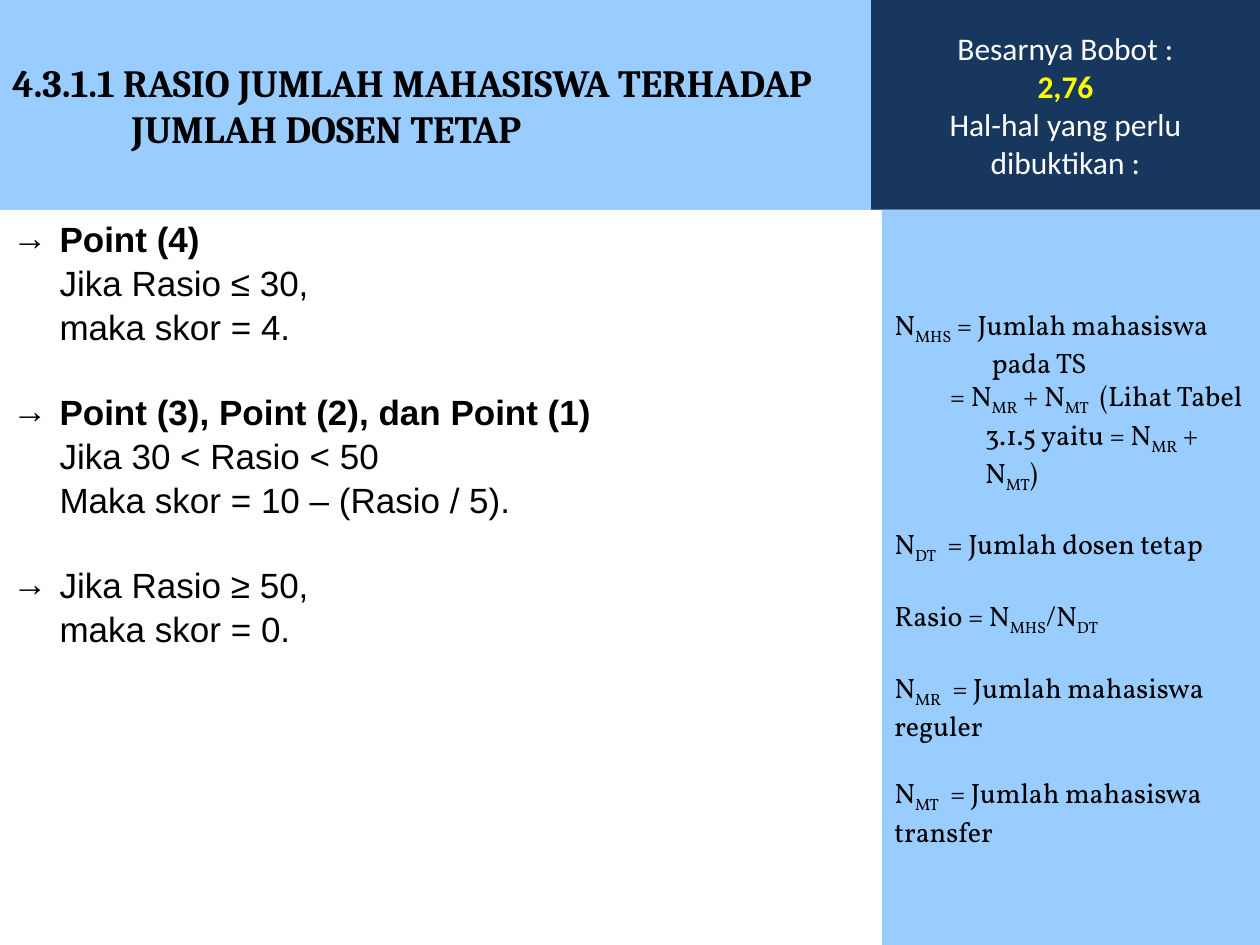
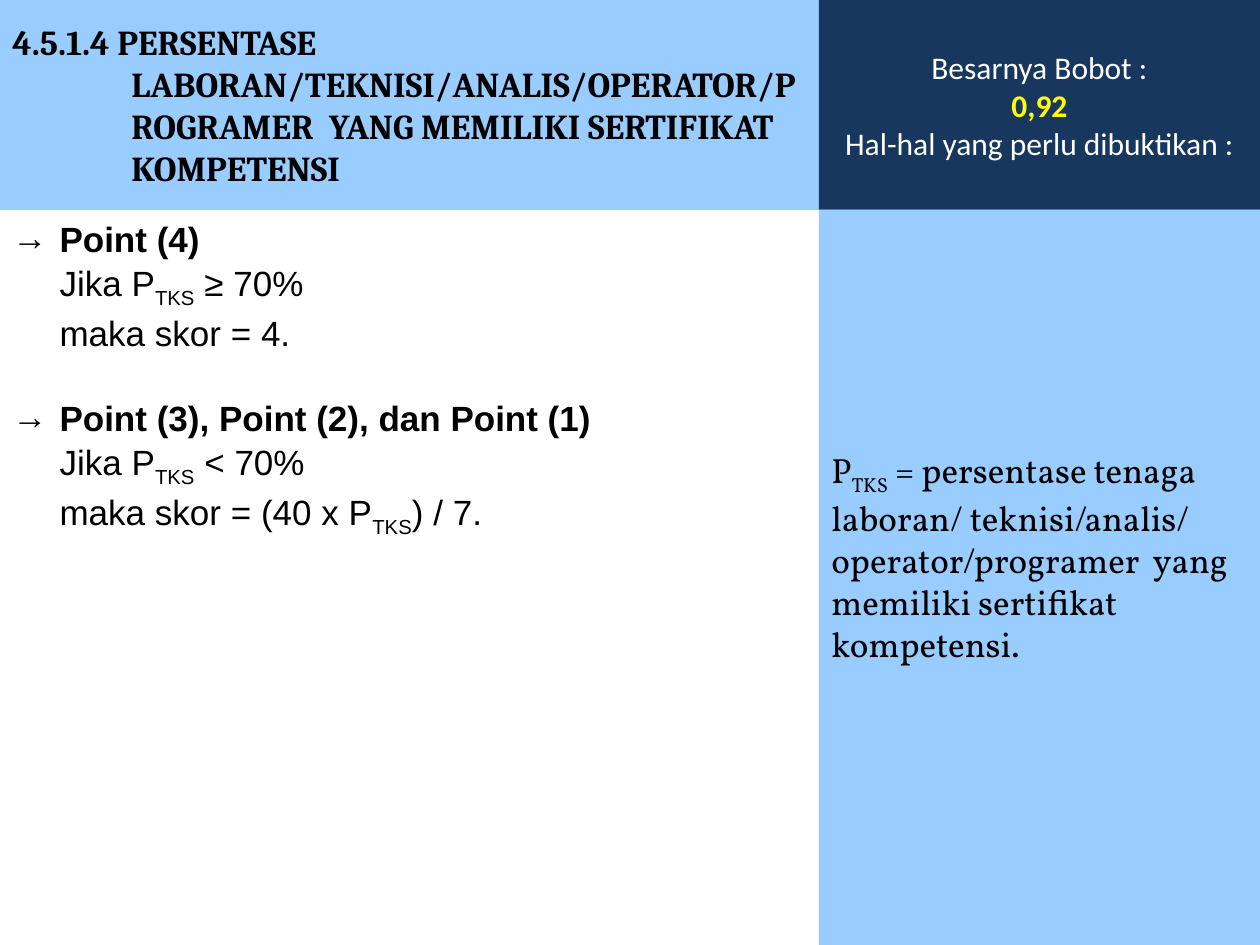
from dataclasses import dataclass

from lxml import etree
from pptx import Presentation
from pptx.dml.color import RGBColor
from pptx.enum.shapes import MSO_SHAPE
from pptx.enum.text import MSO_ANCHOR, MSO_AUTO_SIZE, PP_ALIGN
from pptx.oxml.ns import qn
from pptx.util import Cm, Pt

RECTANGLE = MSO_SHAPE.RECTANGLE
TOP, MIDDLE = MSO_ANCHOR.TOP, MSO_ANCHOR.MIDDLE
LEFT, CENTER = PP_ALIGN.LEFT, PP_ALIGN.CENTER
NO_AUTOFIT = MSO_AUTO_SIZE.NONE

SLIDE_WIDTH, SLIDE_HEIGHT, BAND_HEIGHT = 25.4, 19.05, 4.23
SIDE_INSET, END_INSET = 0.25, 0.13
LIST_INDENT = 0.95
TITLE_INDENT = 2.4
LIGHT_BLUE, NAVY = "99CCFF", "17375E"
BLACK, WHITE, YELLOW = "000000", "FFFFFF", "FFFF00"
ARROW = "→"
SUBSCRIPT_MARK = "~"


@dataclass(frozen=True)
class Style:
    font: str
    size: float
    color: str = BLACK
    bold: bool = False


@dataclass(frozen=True)
class Line:
    text: str
    style: Style
    margin: float = 0
    indent: float = 0
    gap: float = 0
    bullet: str = ""
    align: PP_ALIGN = LEFT
    spacing: float = 1


@dataclass(frozen=True)
class Criterion:
    title: str
    title_size: float
    weight: str
    split: float
    weight_left: float
    rules: list[list[str]]
    definitions: list[Line]
    bottom_inset: float = END_INSET


RULE = Style("Arial", 20)
RULE_HEADING = Style("Arial", 20, bold=True)
DEFINITION = Style("Vollkorn", 16)
LARGE_DEFINITION = Style("Vollkorn", 20)
WEIGHT_LABEL = Style("Calibri", 18, WHITE)
WEIGHT_VALUE = Style("Calibri", 18, YELLOW, True)
RULE_GAP = 24
DEFINITION_GAP = 19.2

CRITERIA = [
    Criterion(
        "4.3.1.1 RASIO JUMLAH MAHASISWA TERHADAP JUMLAH DOSEN TETAP",
        22, "2,76", 17.78, 17.56,
        [
            ["Point (4)", "Jika Rasio ≤ 30,", "maka skor = 4."],
            ["Point (3), Point (2), dan Point (1)", "Jika 30 < Rasio < 50",
             "Maka skor = 10 – (Rasio / 5)."],
            ["Jika Rasio ≥ 50,", "maka skor = 0."],
        ],
        [
            Line("N~MHS~ = Jumlah mahasiswa pada TS", DEFINITION, 1.96, -1.96),
            Line("= N~MR~ + N~MT~  (Lihat Tabel 3.1.5 yaitu = N~MR~ + N~MT~)",
                 DEFINITION, 1.83, -0.71),
            Line("N~DT~  = Jumlah dosen tetap", DEFINITION,
                 gap=DEFINITION_GAP),
            Line("Rasio = N~MHS~/N~DT~", DEFINITION, gap=DEFINITION_GAP),
            Line("N~MR~  = Jumlah mahasiswa reguler", DEFINITION,
                 gap=DEFINITION_GAP),
            Line("N~MT~  = Jumlah mahasiswa transfer", DEFINITION,
                 gap=DEFINITION_GAP),
        ],
    ),
    Criterion(
        "4.5.1.4 PERSENTASE LABORAN/TEKNISI/ANALIS/OPERATOR/PROGRAMER  "
        "YANG MEMILIKI SERTIFIKAT KOMPETENSI",
        20, "0,92", 16.51, 16.51,
        [
            ["Point (4)", "Jika P~TKS~ ≥ 70%", "maka skor = 4."],
            ["Point (3), Point (2), dan Point (1)", "Jika P~TKS~ < 70%",
             "maka skor = (40 x P~TKS~) / 7."],
        ],
        [
            Line("P~TKS~ = persentase tenaga laboran/ teknisi/analis/ "
                 "operator/programer  yang memiliki sertifikat kompetensi.",
                 LARGE_DEFINITION),
        ],
        bottom_inset=0.98,
    ),
]


def rgb(color: str) -> RGBColor:
    return RGBColor.from_string(color)


def place(shape, left: float, top: float, width: float, height: float) -> None:
    shape.left, shape.top = Cm(left), Cm(top)
    shape.width, shape.height = Cm(width), Cm(height)


def fill_shape(shape, color: str) -> None:
    shape.fill.solid()
    shape.fill.fore_color.rgb = rgb(color)


def write_line(paragraph, line: Line) -> None:
    paragraph.alignment = line.align
    paragraph.line_spacing = line.spacing
    paragraph.space_before = Pt(line.gap)
    paragraph.space_after = Pt(0)
    properties = paragraph._p.get_or_add_pPr()
    properties.set("marL", str(Cm(line.margin)))
    properties.set("indent", str(Cm(line.indent)))
    if line.bullet:
        etree.SubElement(properties, qn("a:buFont")).set("typeface", "Arial")
        etree.SubElement(properties, qn("a:buChar")).set("char", line.bullet)
    else:
        etree.SubElement(properties, qn("a:buNone"))
    for position, piece in enumerate(line.text.split(SUBSCRIPT_MARK)):
        if not piece:
            continue
        run = paragraph.add_run()
        run.text = piece
        run.font.name = line.style.font
        run.font.size = Pt(line.style.size)
        run.font.bold = line.style.bold
        run.font.color.rgb = rgb(line.style.color)
        if position % 2:
            run._r.get_or_add_rPr().set("baseline", "-25000")


def write_lines(shape, lines: list[Line], anchor: MSO_ANCHOR,
                bottom_inset: float = END_INSET) -> None:
    frame = shape.text_frame
    frame.word_wrap = True
    frame.auto_size = NO_AUTOFIT
    frame.vertical_anchor = anchor
    frame.margin_left = frame.margin_right = Cm(SIDE_INSET)
    frame.margin_top, frame.margin_bottom = Cm(END_INSET), Cm(bottom_inset)
    for index, line in enumerate(lines):
        paragraph = frame.add_paragraph() if index else frame.paragraphs[0]
        write_line(paragraph, line)


def add_panel(slide, left: float, top: float, height: float, color: str):
    shape = slide.shapes.add_shape(
        RECTANGLE, Cm(left), Cm(top), Cm(SLIDE_WIDTH - left), Cm(height))
    shape.shadow.inherit = False
    shape.line.fill.background()
    fill_shape(shape, color)
    return shape


def rule_lines(rules: list[list[str]]) -> list[Line]:
    lines = []
    for group, texts in enumerate(rules):
        for index, text in enumerate(texts):
            first = index == 0
            lines.append(Line(
                text,
                RULE_HEADING if text.startswith("Point") else RULE,
                LIST_INDENT,
                -LIST_INDENT if first else 0,
                RULE_GAP if first and group else 0,
                ARROW if first else "",
                spacing=1.04))
    return lines


def weight_lines(weight: str) -> list[Line]:
    return [
        Line("Besarnya Bobot :", WEIGHT_LABEL, align=CENTER),
        Line(weight, WEIGHT_VALUE, align=CENTER),
        Line("Hal-hal yang perlu dibuktikan :", WEIGHT_LABEL, align=CENTER),
    ]


def add_criterion(presentation, criterion: Criterion) -> None:
    slide = presentation.slides.add_slide(presentation.slide_layouts[1])
    content_height = SLIDE_HEIGHT - BAND_HEIGHT

    title = slide.shapes.title
    place(title, 0, 0, criterion.split, BAND_HEIGHT)
    fill_shape(title, LIGHT_BLUE)
    title_style = Style("Cambria", criterion.title_size, bold=True)
    write_lines(title, [Line(criterion.title, title_style, TITLE_INDENT,
                             -TITLE_INDENT)], MIDDLE)

    body = slide.placeholders[1]
    place(body, 0, BAND_HEIGHT, criterion.split, content_height)
    write_lines(body, rule_lines(criterion.rules), TOP)

    sidebar = add_panel(slide, criterion.split, BAND_HEIGHT, content_height,
                        LIGHT_BLUE)
    write_lines(sidebar, criterion.definitions, MIDDLE, criterion.bottom_inset)

    weight = add_panel(slide, criterion.weight_left, 0, BAND_HEIGHT, NAVY)
    write_lines(weight, weight_lines(criterion.weight), MIDDLE)


def main() -> None:
    presentation = Presentation()
    presentation.slide_width = Cm(SLIDE_WIDTH)
    presentation.slide_height = Cm(SLIDE_HEIGHT)
    for criterion in CRITERIA:
        add_criterion(presentation, criterion)
    presentation.save("out.pptx")


if __name__ == "__main__":
    main()
